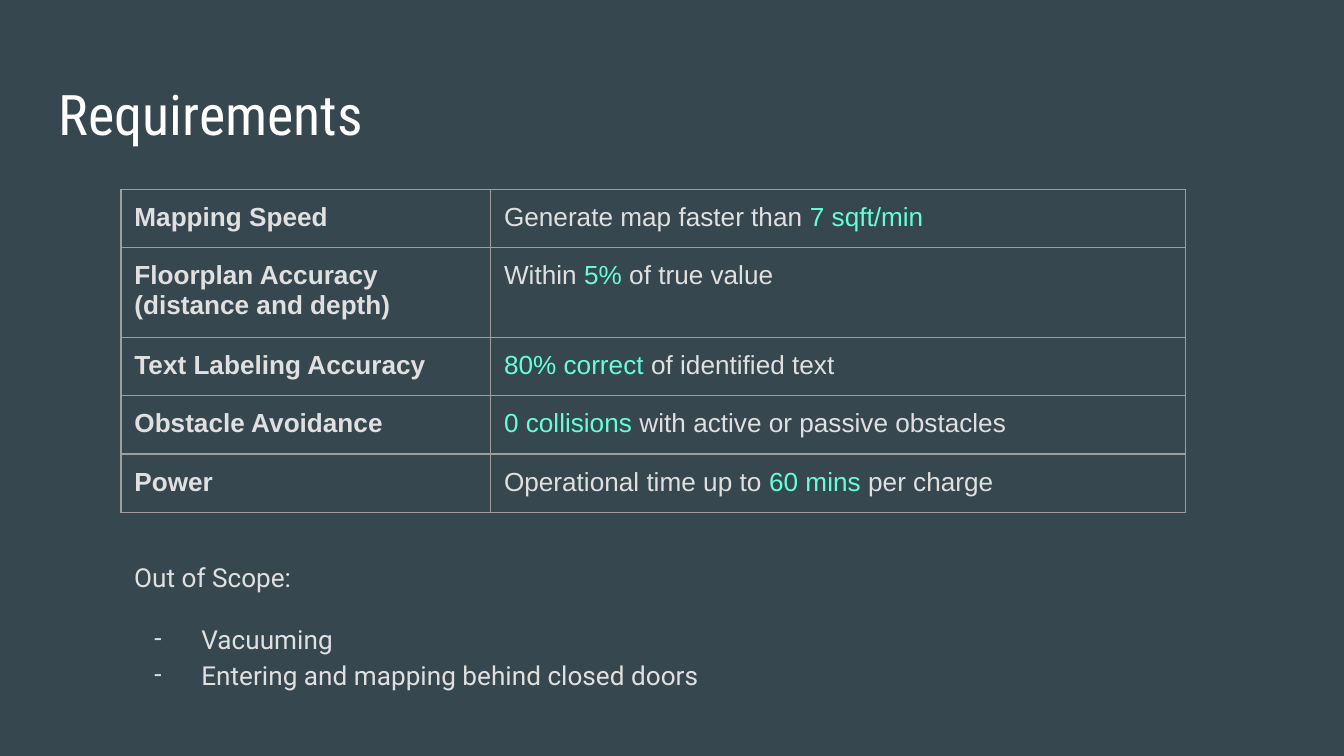
"""Build the project requirements slide."""
from typing import NamedTuple

from lxml import etree
from pptx import Presentation
from pptx.dml.color import RGBColor
from pptx.enum.text import MSO_ANCHOR
from pptx.oxml.ns import qn
from pptx.util import Inches, Pt

TOP = MSO_ANCHOR.TOP
BACKGROUND, WHITE, BODY = "37474F", "FFFFFF", "E0E0E0"
ACCENT, BORDER = "64FFDA", "9E9E9E"
PADDING = 0.1
BORDER_SIDES = ("a:lnL", "a:lnR", "a:lnT", "a:lnB")


class Run(NamedTuple):
    text: str
    color: str = BODY
    bold: bool = False


class Requirement(NamedTuple):
    label: tuple[str, ...]
    target: tuple[Run, ...]
    height: float = 0.42


REQUIREMENTS = (
    Requirement(("Mapping Speed",),
                (Run("Generate map faster than "), Run("7 sqft/min", ACCENT))),
    Requirement(("Floorplan Accuracy", "(distance and depth)"),
                (Run("Within "), Run("5% ", ACCENT), Run("of true value"))),
    Requirement(("Text Labeling Accuracy",),
                (Run("80% correct", ACCENT), Run(" of identified text"))),
    Requirement(("Obstacle Avoidance",),
                (Run("0 collisions", ACCENT), Run(" with active or passive obstacles"))),
    Requirement(("Power",),
                (Run("Operational time up to "), Run("60 mins", ACCENT), Run(" per charge")),
                0.34),
)
COLUMN_WIDTHS = (2.75, 5.17)
EXCLUSIONS = ("Vacuuming", "Entering and mapping behind closed doors")


def rgb(value: str) -> RGBColor:
    """Turn a hex string into a colour."""
    return RGBColor.from_string(value)


def add_runs(paragraph, runs: tuple[Run, ...], font: str, size: float) -> None:
    """Append styled runs to a paragraph."""
    for item in runs:
        run = paragraph.add_run()
        run.text = item.text
        run.font.name = font
        run.font.size = Pt(size)
        run.font.bold = item.bold
        run.font.color.rgb = rgb(item.color)


def set_padding(holder, top: float = PADDING) -> None:
    """Set the inner margins of a text frame or table cell."""
    holder.margin_left = holder.margin_right = holder.margin_bottom = Inches(PADDING)
    holder.margin_top = Inches(top)
    holder.vertical_anchor = TOP


def add_text_frame(slide, left: float, top: float, width: float, height: float,
                   top_padding: float = PADDING):
    """Add a wrapping text box and return its text frame."""
    frame = slide.shapes.add_textbox(
        Inches(left), Inches(top), Inches(width), Inches(height)).text_frame
    frame.word_wrap = True
    set_padding(frame, top_padding)
    return frame


def set_borders(cell) -> None:
    """Draw a thin line on every side of a cell."""
    properties = cell._tc.get_or_add_tcPr()
    for index, side in enumerate(BORDER_SIDES):
        line = etree.Element(qn(side), w=str(Pt(0.75)))
        fill = etree.SubElement(line, qn("a:solidFill"))
        etree.SubElement(fill, qn("a:srgbClr"), val=BORDER)
        properties.insert(index, line)


def fill_cell(cell, lines: list[tuple[Run, ...]]) -> None:
    """Write one paragraph per line into a bordered, unfilled cell."""
    set_padding(cell)
    cell.fill.background()
    set_borders(cell)
    frame = cell.text_frame
    for index, runs in enumerate(lines):
        paragraph = frame.add_paragraph() if index else frame.paragraphs[0]
        add_runs(paragraph, runs, "Arial", 14)


def add_requirements(slide) -> None:
    """Add the table of requirements and their targets."""
    table = slide.shapes.add_table(
        len(REQUIREMENTS), len(COLUMN_WIDTHS), Inches(0.9), Inches(1.41),
        Inches(sum(COLUMN_WIDTHS)), Inches(sum(r.height for r in REQUIREMENTS))).table
    table.first_row = table.horz_banding = False
    for column, width in zip(table.columns, COLUMN_WIDTHS):
        column.width = Inches(width)
    for index, requirement in enumerate(REQUIREMENTS):
        table.rows[index].height = Inches(requirement.height)
        fill_cell(table.cell(index, 0),
                  [(Run(line, bold=True),) for line in requirement.label])
        fill_cell(table.cell(index, 1), [requirement.target])


def add_dash(paragraph) -> None:
    """Give a paragraph a hanging dash bullet."""
    properties = paragraph._p.get_or_add_pPr()
    properties.set("marL", str(Inches(0.5)))
    properties.set("indent", str(Inches(-0.35)))
    color = etree.SubElement(properties, qn("a:buClr"))
    etree.SubElement(color, qn("a:srgbClr"), val=BODY)
    etree.SubElement(properties, qn("a:buFont"), typeface="Roboto")
    etree.SubElement(properties, qn("a:buChar"), char="-")


def add_scope(slide) -> None:
    """Add the list of items that are out of scope."""
    frame = add_text_frame(slide, 0.9, 3.62, 5.26, 1.5, top_padding=0.56)
    add_runs(frame.paragraphs[0], (Run("Out of Scope:"),), "Roboto", 14)
    for index, exclusion in enumerate(EXCLUSIONS):
        paragraph = frame.add_paragraph()
        paragraph.line_spacing = 1.15 if index else 1.0
        paragraph.space_before = Pt(0 if index else 16)
        add_dash(paragraph)
        add_runs(paragraph, (Run(exclusion),), "Roboto", 14)


def main() -> None:
    """Create and save the slide."""
    presentation = Presentation()
    presentation.slide_width = Inches(10)
    presentation.slide_height = Inches(10) * 9 // 16
    slide = presentation.slides.add_slide(presentation.slide_layouts[6])
    slide.background.fill.solid()
    slide.background.fill.fore_color.rgb = rgb(BACKGROUND)
    title = add_text_frame(slide, 0.34, 0.49, 9.32, 0.63)
    add_runs(title.paragraphs[0], (Run("Requirements", WHITE),), "Roboto Condensed", 30)
    add_scope(slide)
    add_requirements(slide)
    presentation.save("out.pptx")


if __name__ == "__main__":
    main()
